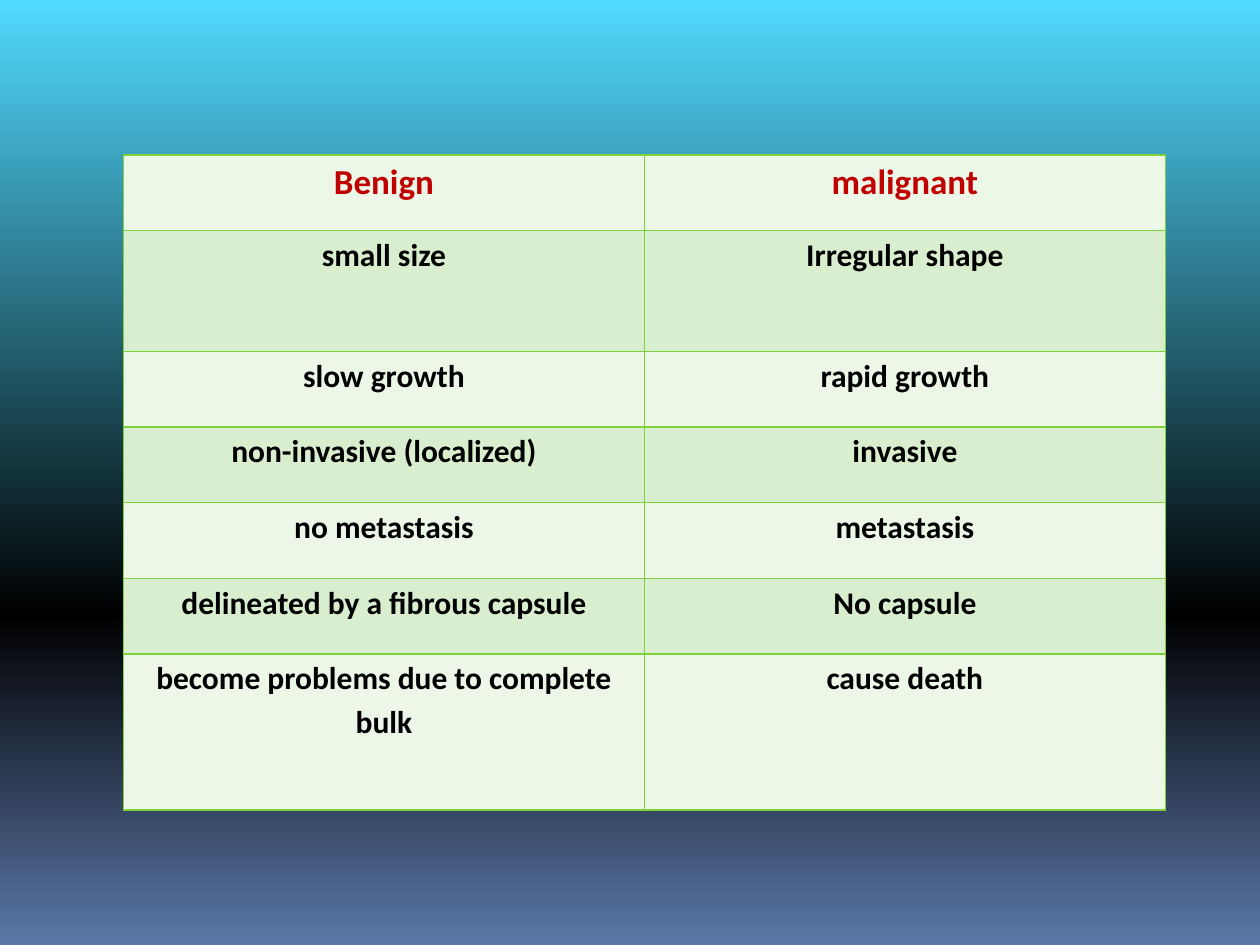
from copy import deepcopy

from lxml import etree
from pptx import Presentation
from pptx.dml.color import RGBColor
from pptx.enum.text import PP_ALIGN
from pptx.oxml.ns import qn
from pptx.util import Inches, Pt

CENTER = PP_ALIGN.CENTER
BLANK_LAYOUT = 6


def color(value):
    return RGBColor.from_string(value)


def add_borders(cell, value, width):
    properties = cell._tc.get_or_add_tcPr()
    for position, side in enumerate(("lnL", "lnR", "lnT", "lnB")):
        border = etree.Element(qn(f"a:{side}"), w=str(width))
        fill = etree.SubElement(border, qn("a:solidFill"))
        etree.SubElement(fill, qn("a:srgbClr"), val=value)
        properties.insert(position, border)


comparison = [
    ("Benign", "malignant"),
    ("small size", "Irregular shape"),
    ("slow growth", "rapid growth"),
    ("non-invasive (localized)", "invasive"),
    ("no metastasis", "metastasis"),
    ("delineated by a fibrous capsule", "No capsule"),
    ("become problems due to complete bulk", "cause death"),
]
row_heights = [0.6, 0.96, 0.6, 0.6, 0.6, 0.6, 1.24]
band_fills = ["ECF7E8", "D8EECE"]
spaced_cells = {(0, 0), (0, 1), (1, 0), (2, 0), (3, 0)}
background_stops = [(0, "51DAFF"), (0.65, "000000"), (1, "5B77A8")]

prs = Presentation()
prs.slide_width, prs.slide_height = Inches(10), Inches(7.5)
slide = prs.slides.add_slide(prs.slide_layouts[BLANK_LAYOUT])

backdrop = slide.background.fill
backdrop.gradient()
backdrop.gradient_angle = 270
stop_list = next(slide.element.iter(qn("a:gsLst")))
stop_list.append(deepcopy(stop_list[0]))
for stop, (position, value) in zip(backdrop.gradient_stops, background_stops):
    stop.position = position
    stop.color.rgb = color(value)

table = slide.shapes.add_table(
    len(comparison), 2, Inches(0.98), Inches(1.23), Inches(8.27), Inches(sum(row_heights))
).table

for row, (entries, height) in enumerate(zip(comparison, row_heights)):
    table.rows[row].height = Inches(height)
    for column, entry in enumerate(entries):
        cell = table.cell(row, column)
        cell.fill.solid()
        cell.fill.fore_color.rgb = color(band_fills[row % 2])
        add_borders(cell, "7FD13B", Pt(1))
        cell.margin_left = cell.margin_right = Inches(0.07)
        cell.margin_top = cell.margin_bottom = 0
        cell.text_frame.text = entry
        paragraph = cell.text_frame.paragraphs[0]
        paragraph.alignment = CENTER
        paragraph.line_spacing = 1.15
        paragraph.space_before = Pt(12 if (row, column) in spaced_cells else 0)
        paragraph.space_after = Pt(8)
        paragraph._p.get_or_add_pPr().set("rtl", "1")
        font = paragraph.runs[0].font
        font.name = "Calibri"
        font.size = Pt(18 if row else 20)
        font.bold = True
        font.color.rgb = color("000000" if row else "C00000")

prs.save("out.pptx")
